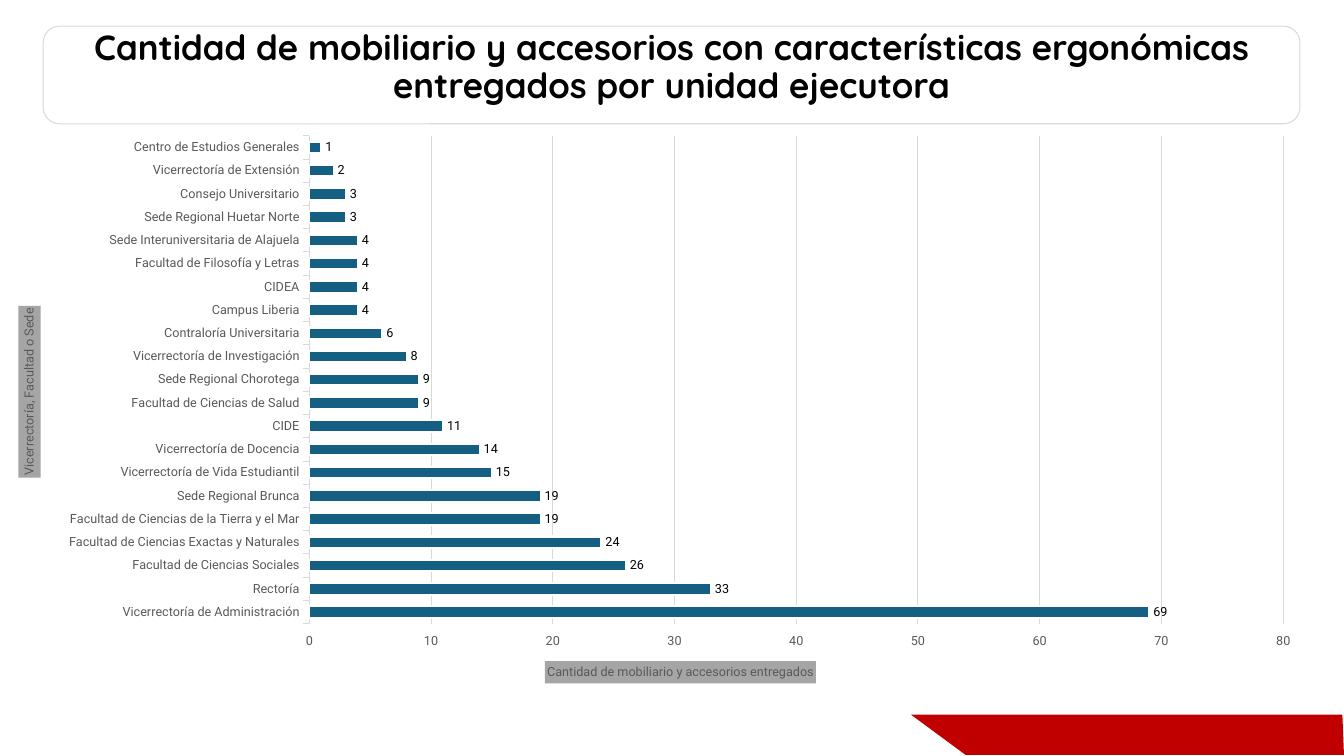
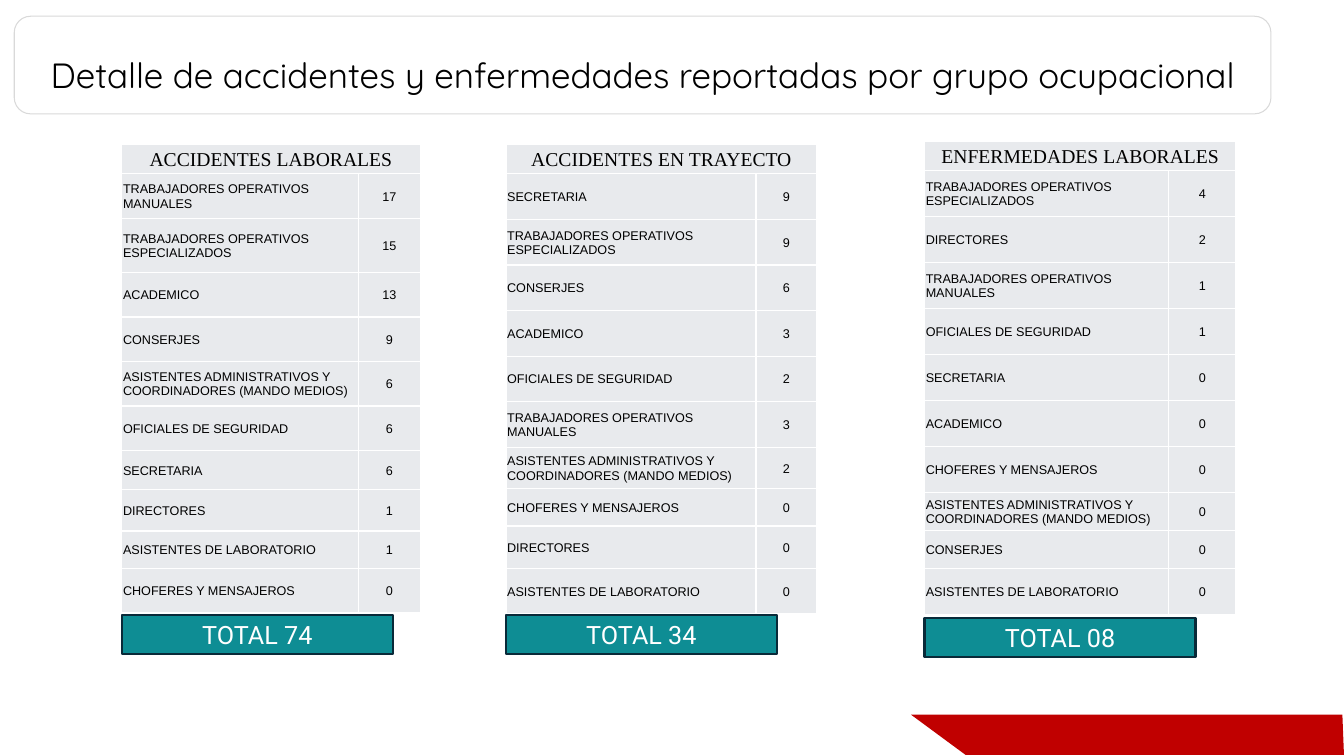
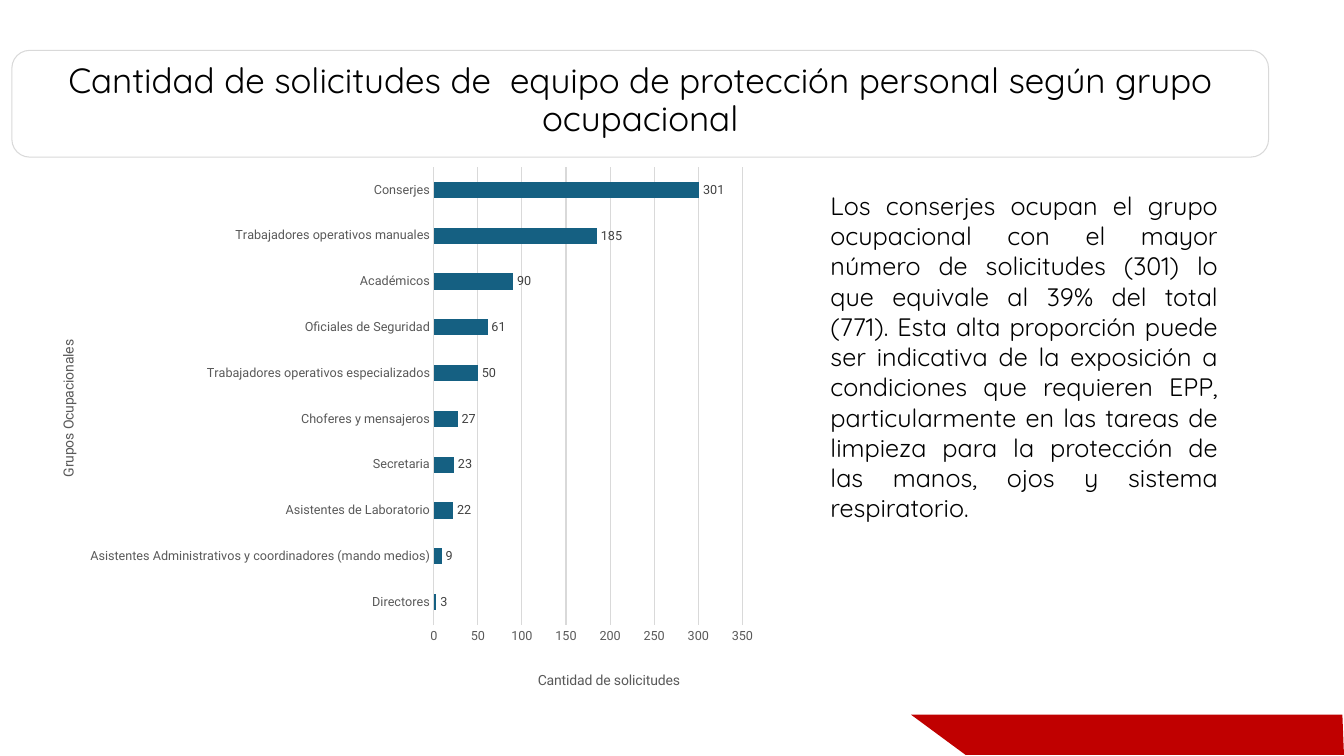
"""Build three slides on ergonomic furniture, work accidents and protective equipment."""
from dataclasses import dataclass

from lxml import etree
from pptx import Presentation
from pptx.chart.data import CategoryChartData
from pptx.dml.color import RGBColor
from pptx.enum.chart import XL_CHART_TYPE, XL_LABEL_POSITION, XL_TICK_MARK
from pptx.enum.shapes import MSO_SHAPE
from pptx.enum.text import MSO_ANCHOR, PP_ALIGN
from pptx.oxml.ns import qn
from pptx.util import Cm, Pt

BAR = XL_CHART_TYPE.BAR_CLUSTERED
OUTSIDE_END = XL_LABEL_POSITION.OUTSIDE_END
TICK_NONE, TICK_OUT = XL_TICK_MARK.NONE, XL_TICK_MARK.OUTSIDE
RECTANGLE, ROUNDED = MSO_SHAPE.RECTANGLE, MSO_SHAPE.ROUNDED_RECTANGLE
MIDDLE, BOTTOM = MSO_ANCHOR.MIDDLE, MSO_ANCHOR.BOTTOM
LEFT, CENTER, JUSTIFY = PP_ALIGN.LEFT, PP_ALIGN.CENTER, PP_ALIGN.JUSTIFY


@dataclass(frozen=True)
class Theme:
    red: str = "C00000"
    black: str = "000000"
    white: str = "FFFFFF"
    rule: str = "D9D9D9"
    bar: str = "156082"
    axis: str = "595959"
    value: str = "404040"
    highlight: str = "A5A5A5"
    cell: str = "E8EAED"
    total: str = "0E8D94"
    total_line: str = "092A39"
    title_font: str = "Quicksand"
    chart_font: str = "Roboto"
    heading_font: str = "Times New Roman"
    cell_font: str = "Arial"
    title_size: float = 25
    body_size: float = 18
    heading_size: float = 14
    axis_title_size: float = 10
    small_size: float = 9


THEME = Theme()


@dataclass(frozen=True)
class Box:
    left: float
    top: float
    width: float
    height: float

    def emu(self) -> tuple:
        return Cm(self.left), Cm(self.top), Cm(self.width), Cm(self.height)


@dataclass(frozen=True)
class AxisTitle:
    text: str
    x: float
    y: float
    rotation: int = 0


@dataclass(frozen=True)
class BarChart:
    box: Box
    plot: tuple
    bars: dict
    category_title: AxisTitle
    value_title: AxisTitle
    maximum: int
    step: int
    gap: int
    ticks: int
    label_color: str
    title_size: float
    title_fill: str = ""
    outline: str = ""


@dataclass(frozen=True)
class GroupTable:
    heading: str
    left: float
    top: float
    columns: tuple
    heights: tuple
    rows: tuple
    total: str
    total_top: float


def rgb(color: str) -> RGBColor:
    return RGBColor.from_string(color)


def style_font(font, size: float, name: str, color: str, bold: bool = False) -> None:
    font.size, font.name, font.bold = Pt(size), name, bold
    font.color.rgb = rgb(color)


def write(frame, text: str, *, size: float, font: str, color: str = THEME.black,
          bold: bool = False, align=None, spacing=None) -> None:
    paragraph = frame.paragraphs[0]
    if align is not None:
        paragraph.alignment = align
    if spacing is not None:
        paragraph.line_spacing = spacing
    run = paragraph.add_run()
    run.text = text
    style_font(run.font, size, font, color, bold)


def set_line(line, color: str, width: float) -> None:
    line.color.rgb = rgb(color)
    line.width = Pt(width)


def add_band(slide, layout) -> None:
    corners = [(Cm(x), Cm(y)) for x, y in
               ((33.83, 18.01), (22.96, 18.01), (24.33, 19.02), (33.87, 19.02))]
    builder = slide.shapes.build_freeform(*corners[0])
    builder.add_line_segments(corners[1:], close=True)
    band = builder.convert_to_shape()
    band.shadow.inherit = False
    band.fill.solid()
    band.fill.fore_color.rgb = rgb(THEME.red)
    band.line.fill.background()
    layout.shapes.element.append(band.element)


def add_title(slide, text: str, box: Box, bold: bool = False) -> None:
    frame_shape = slide.shapes.add_shape(ROUNDED, *box.emu())
    frame_shape.shadow.inherit = False
    frame_shape.fill.background()
    set_line(frame_shape.line, THEME.rule, 0.75)
    frame = frame_shape.text_frame
    frame.word_wrap = True
    frame.vertical_anchor = BOTTOM
    frame.margin_left = frame.margin_right = Cm(0.33)
    frame.margin_top = frame.margin_bottom = Cm(0.33)
    write(frame, text, size=THEME.title_size, font=THEME.title_font, bold=bold,
          align=CENTER, spacing=0.9)


def add_total(slide, text: str, left: float, top: float) -> None:
    total = slide.shapes.add_shape(RECTANGLE, *Box(left, top, 6.83, 0.99).emu())
    total.shadow.inherit = False
    total.fill.solid()
    total.fill.fore_color.rgb = rgb(THEME.total)
    set_line(total.line, THEME.total_line, 1.5)
    total.text_frame.vertical_anchor = MIDDLE
    write(total.text_frame, text, size=THEME.body_size, font=THEME.chart_font,
          color=THEME.white, align=CENTER)


def fill_cell(cell, text: str, size: float, font: str, align) -> None:
    cell.margin_left = cell.margin_right = cell.margin_top = Cm(0.03)
    cell.margin_bottom = 0
    cell.vertical_anchor = MIDDLE
    properties = cell._tc.get_or_add_tcPr()
    for side in "LRTB":
        border = etree.SubElement(properties, qn(f"a:ln{side}"), w=str(Pt(1)))
        paint = etree.SubElement(border, qn("a:solidFill"))
        etree.SubElement(paint, qn("a:srgbClr"), val=THEME.white)
    cell.fill.solid()
    cell.fill.fore_color.rgb = rgb(THEME.cell)
    if text:
        write(cell.text_frame, text, size=size, font=font, align=align)


def add_group_table(slide, group: GroupTable) -> None:
    box = Box(group.left, group.top, sum(group.columns), sum(group.heights))
    table = slide.shapes.add_table(len(group.heights), 2, *box.emu()).table
    table.first_row = table.horz_banding = False
    for column, width in zip(table.columns, group.columns):
        column.width = Cm(width)
    for row, height in zip(table.rows, group.heights):
        row.height = Cm(height)
    table.cell(0, 0).merge(table.cell(0, 1))
    for column, heading in enumerate((group.heading, "")):
        fill_cell(table.cell(0, column), heading, THEME.heading_size,
                  THEME.heading_font, CENTER)
    for index, (occupation, count) in enumerate(group.rows, start=1):
        for column, (text, align) in enumerate(((occupation, LEFT), (str(count), CENTER))):
            fill_cell(table.cell(index, column), text, THEME.small_size,
                      THEME.cell_font, align)
    add_total(slide, group.total, group.left, group.total_top)


def place(element, inner: bool = False, **fractions: float) -> None:
    layout = element.find(qn("c:layout"))
    if layout is None:
        layout = etree.Element(qn("c:layout"))
        element.insert(0, layout)
    manual = etree.SubElement(layout, qn("c:manualLayout"))
    if inner:
        etree.SubElement(manual, qn("c:layoutTarget"), val="inner")
    for side in "xy":
        etree.SubElement(manual, qn(f"c:{side}Mode"), val="edge")
    for side, fraction in fractions.items():
        etree.SubElement(manual, qn(f"c:{side}"), val=str(fraction))


def style_axis(axis, title: AxisTitle, chart: BarChart) -> None:
    axis.major_tick_mark = chart.ticks
    axis.minor_tick_mark = TICK_NONE
    style_font(axis.tick_labels.font, THEME.small_size, THEME.chart_font, THEME.axis)
    axis_title = axis.axis_title
    write(axis_title.text_frame, title.text, size=chart.title_size,
          font=THEME.chart_font, color=THEME.axis)
    body = axis_title.text_frame._txBody.find(qn("a:bodyPr"))
    body.set("rot", str(title.rotation * 60000))
    body.set("vert", "horz")
    if chart.title_fill:
        axis_title.format.fill.solid()
        axis_title.format.fill.fore_color.rgb = rgb(chart.title_fill)
    place(axis_title._element, x=title.x, y=title.y)


def add_bar_chart(slide, spec_chart: BarChart) -> None:
    data = CategoryChartData()
    data.categories = list(spec_chart.bars)
    data.add_series("Series 1", list(spec_chart.bars.values()))
    chart = slide.shapes.add_chart(BAR, *spec_chart.box.emu(), data).chart
    chart.has_legend = chart.has_title = False
    style_font(chart.font, THEME.axis_title_size, THEME.chart_font, THEME.black)

    style_axis(chart.category_axis, spec_chart.category_title, spec_chart)
    set_line(chart.category_axis.format.line, THEME.rule, 0.75)
    values = chart.value_axis
    style_axis(values, spec_chart.value_title, spec_chart)
    values.minimum_scale, values.maximum_scale = 0, spec_chart.maximum
    values.major_unit = spec_chart.step
    values.format.line.fill.background()
    set_line(values.major_gridlines.format.line, THEME.rule, 0.75)

    plot = chart.plots[0]
    plot.gap_width = spec_chart.gap
    plot.vary_by_categories = False
    series = plot.series[0]
    series.format.fill.solid()
    series.format.fill.fore_color.rgb = rgb(THEME.bar)
    if spec_chart.outline:
        set_line(series.format.line, spec_chart.outline, 1.5)
    labels = series.data_labels
    labels.show_value = True
    labels.position = OUTSIDE_END
    style_font(labels.font, THEME.small_size, THEME.chart_font, spec_chart.label_color)
    area = chart._chartSpace.find(f".//{qn('c:plotArea')}")
    place(area, inner=True, **dict(zip("xywh", spec_chart.plot)))


FURNITURE = BarChart(
    box=Box(0, 3.12, 33.17, 14.48),
    plot=(0.235, 0.021, 0.74, 0.849),
    bars={
        "Vicerrectoría de Administración": 69,
        "Rectoría": 33,
        "Facultad de Ciencias Sociales": 26,
        "Facultad de Ciencias Exactas y Naturales": 24,
        "Facultad de Ciencias de la Tierra y el Mar": 19,
        "Sede Regional Brunca": 19,
        "Vicerrectoría de Vida Estudiantil": 15,
        "Vicerrectoría de Docencia": 14,
        "CIDE": 11,
        "Facultad de Ciencias de Salud": 9,
        "Sede Regional Chorotega": 9,
        "Vicerrectoría de Investigación": 8,
        "Contraloría Universitaria": 6,
        "Campus Liberia": 4,
        "CIDEA": 4,
        "Facultad de Filosofía y Letras": 4,
        "Sede Interuniversitaria de Alajuela": 4,
        "Sede Regional Huetar Norte": 3,
        "Consejo Universitario": 3,
        "Vicerrectoría de Extensión": 2,
        "Centro de Estudios Generales": 1,
    },
    category_title=AxisTitle("Vicerrectoría, Facultad o Sede", 0.014, 0.317, -90),
    value_title=AxisTitle("Cantidad de mobiliario y accesorios entregados", 0.414, 0.935),
    maximum=80, step=10, gap=100, ticks=TICK_OUT, label_color=THEME.black,
    title_size=THEME.small_size, title_fill=THEME.highlight, outline=THEME.white,
)

REQUESTS = BarChart(
    box=Box(0.84, 3.94, 18.52, 13.61),
    plot=(0.545, 0.02, 0.42, 0.848),
    bars={
        "Directores": 3,
        "Asistentes Administrativos y coordinadores (mando medios)": 9,
        "Asistentes de Laboratorio": 22,
        "Secretaria": 23,
        "Choferes y mensajeros": 27,
        "Trabajadores operativos especializados": 50,
        "Oficiales de Seguridad": 61,
        "Académicos": 90,
        "Trabajadores operativos manuales": 185,
        "Conserjes": 301,
    },
    category_title=AxisTitle("Grupos Ocupacionales", 0.032, 0.335, -90),
    value_title=AxisTitle("Cantidad de solicitudes", 0.683, 0.948),
    maximum=350, step=50, gap=182, ticks=TICK_NONE, label_color=THEME.value,
    title_size=THEME.axis_title_size,
)

MANUAL = "TRABAJADORES OPERATIVOS MANUALES"
SPECIALIZED = "TRABAJADORES OPERATIVOS ESPECIALIZADOS"
ACADEMIC = "ACADEMICO"
JANITORS = "CONSERJES"
ASSISTANTS = "ASISTENTES ADMINISTRATIVOS Y COORDINADORES (MANDO MEDIOS)"
SECURITY = "OFICIALES DE SEGURIDAD"
SECRETARY = "SECRETARIA"
DIRECTORS = "DIRECTORES"
LABORATORY = "ASISTENTES DE LABORATORIO"
DRIVERS = "CHOFERES Y MENSAJEROS"

GROUPS = (
    GroupTable(
        "ACCIDENTES LABORALES", 3.07, 3.64, (5.97, 1.55),
        (0.74, 1.12, 1.37, *[1.12] * 4, 0.99, 1.04, 0.94, 1.12),
        ((MANUAL, 17), (SPECIALIZED, 15), (ACADEMIC, 13), (JANITORS, 9), (ASSISTANTS, 6),
         (SECURITY, 6), (SECRETARY, 6), (DIRECTORS, 1), (LABORATORY, 1), (DRIVERS, 0)),
        "TOTAL 74", 15.49),
    GroupTable(
        "ACCIDENTES EN TRAYECTO", 12.75, 3.64, (6.3, 1.54),
        (0.74, *[1.15] * 6, 1.04, 0.94, 1.07, 1.15),
        ((SECRETARY, 9), (SPECIALIZED, 9), (JANITORS, 6), (ACADEMIC, 3), (SECURITY, 2),
         (MANUAL, 3), (ASSISTANTS, 2), (DRIVERS, 0), (DIRECTORS, 0), (LABORATORY, 0)),
        "TOTAL 34", 15.49),
    GroupTable(
        "ENFERMEDADES LABORALES", 23.3, 3.56, (6.15, 1.7),
        (0.74, *[1.16] * 7, 0.94, 0.97, 1.16),
        ((SPECIALIZED, 4), (DIRECTORS, 2), (MANUAL, 1), (SECURITY, 1), (SECRETARY, 0),
         (ACADEMIC, 0), (DRIVERS, 0), (ASSISTANTS, 0), (JANITORS, 0), (LABORATORY, 0)),
        "TOTAL 08", 15.57),
)

FINDING = (
    "Los conserjes ocupan el grupo ocupacional con el mayor número de solicitudes (301) "
    "lo que equivale al 39% del total (771). Esta alta proporción puede ser indicativa de "
    "la exposición a condiciones que requieren EPP, particularmente en las tareas de "
    "limpieza para la protección de las manos, ojos y sistema respiratorio."
)


def main() -> None:
    deck = Presentation()
    deck.slide_width, deck.slide_height = Cm(33.87), Cm(19.05)
    blank = deck.slide_layouts[6]
    furniture, accidents, requests = (deck.slides.add_slide(blank) for _ in range(3))
    add_band(furniture, blank)

    add_title(furniture, "Cantidad de mobiliario y accesorios con características "
              "ergonómicas entregados por unidad ejecutora",
              Box(1.09, 0.66, 31.67, 2.46), bold=True)
    add_bar_chart(furniture, FURNITURE)

    add_title(accidents, "Detalle de accidentes y enfermedades reportadas por grupo "
              "ocupacional", Box(0.36, 0.41, 31.67, 2.46))
    for group in GROUPS:
        add_group_table(accidents, group)

    add_title(requests, "Cantidad de solicitudes de  equipo de protección personal según "
              "grupo ocupacional", Box(0.3, 1.27, 31.67, 2.69))
    add_bar_chart(requests, REQUESTS)
    finding = requests.shapes.add_textbox(*Box(20.68, 4.67, 10.26, 9.5).emu()).text_frame
    finding.word_wrap = True
    write(finding, FINDING, size=THEME.body_size, font=THEME.title_font, align=JUSTIFY)

    deck.save("out.pptx")


if __name__ == "__main__":
    main()
